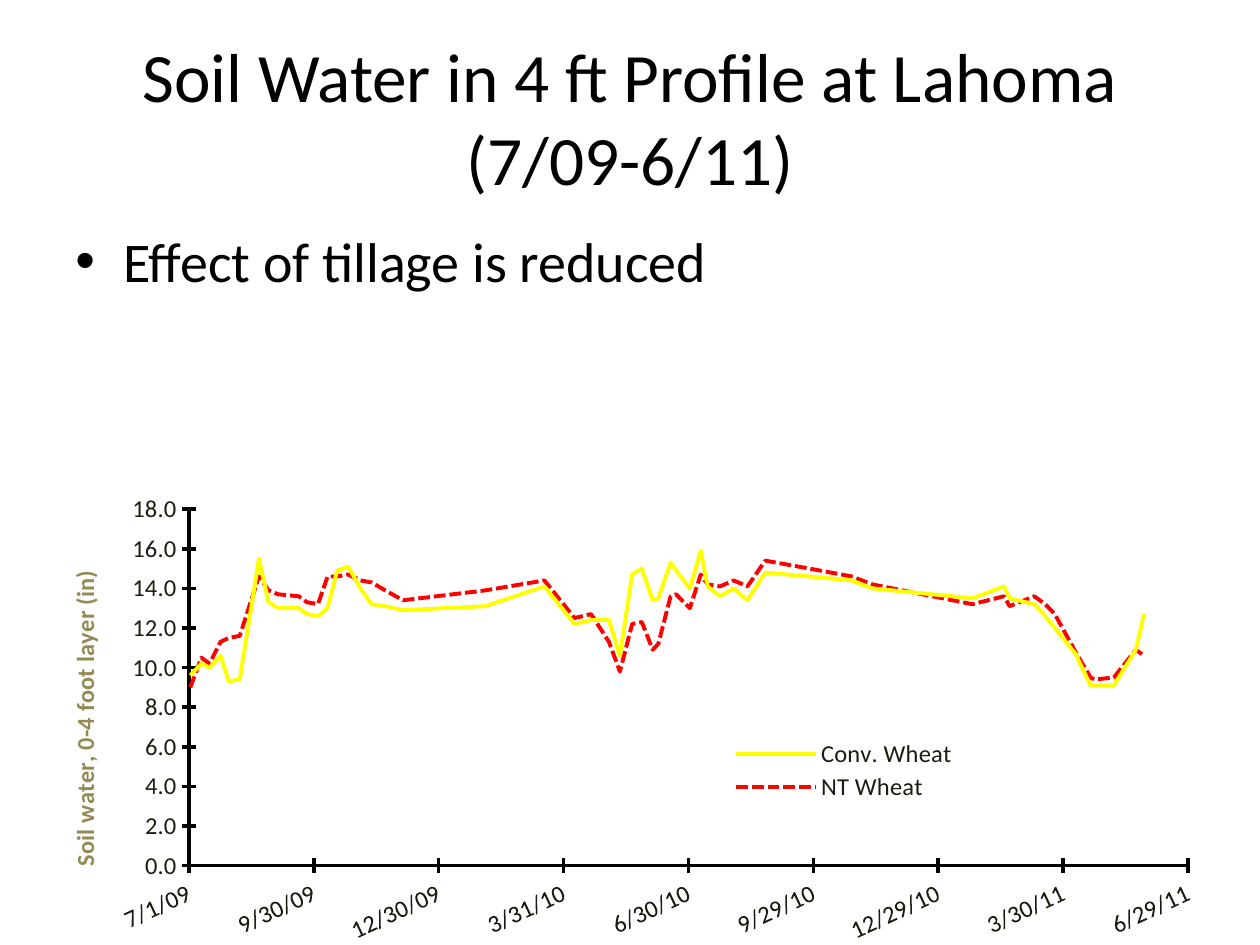
from dataclasses import dataclass

from lxml.etree import SubElement
from pptx import Presentation
from pptx.chart.data import XyChartData
from pptx.dml.color import RGBColor as Rgb
from pptx.enum.chart import XL_CHART_TYPE as ChartType, XL_LEGEND_POSITION as LegendSide, XL_TICK_MARK as Tick
from pptx.enum.dml import MSO_LINE_DASH_STYLE as Dash
from pptx.enum.text import MSO_ANCHOR as Anchor, MSO_AUTO_SIZE as AutoSize, PP_ALIGN as Align
from pptx.oxml.ns import qn
from pptx.util import Inches, Pt


@dataclass(frozen=True)
class Theme:
    font: str = "Calibri"
    ink: Rgb = Rgb(0, 0, 0)
    label: Rgb = Rgb(0x1E, 0x1C, 0x11)
    axis_title: Rgb = Rgb(0x94, 0x8A, 0x54)
    conventional: Rgb = Rgb(0xFF, 0xFF, 0)
    no_till: Rgb = Rgb(0xFF, 0, 0)
    title_size: float = 39.6
    body_size: float = 32
    chart_size: float = 14
    axis_width: float = 2
    series_width: float = 2.25


THEME = Theme()
WIDTH, HEIGHT = Inches(10), Inches(7.5)

TITLE_BOX = (0.05, 0.04, 0.9, 0.167)
BODY_BOX = (0.05, 0.233, 0.9, 0.66)
CHART_BOX = (0, 0.523, 1, 0.477)

SAMPLE_DAYS = [
    39996, 40004, 40010, 40018, 40024, 40032, 40038, 40046, 40053, 40060, 40075,
    40081, 40089, 40096, 40103, 40111, 40120, 40128, 40138, 40151, 40211, 40254,
    40276, 40288, 40301, 40309, 40318, 40325, 40333, 40337, 40346, 40350, 40360,
    40368, 40373, 40382, 40392, 40402, 40415, 40447, 40478, 40493, 40566, 40589,
    40593, 40611, 40619, 40626, 40641, 40652, 40655, 40669, 40685, 40691,
]
CONV_WATER = [
    9.6, 10.2, 10, 10.6, 9.3, 9.4, 12, 15.5, 13.3, 13, 13, 12.7, 12.6, 13, 14.9,
    15.1, 14, 13.2, 13.1, 12.9, 13.1, 14.1, 12.2, 12.4, 12.4, 10.6, 14.7, 15,
    13.4, 13.5, 15.3, 14.9, 14, 15.9, 14.1, 13.6, 14, 13.4, 14.8, 14.6, 14.4,
    14, 13.5, 14.1, 13.5, 13.2, 12.6, 12, 10.7, 9.1, 9.1, 9.1, 10.9, 12.7,
]
NO_TILL_WATER = [
    9, 10.5, 10.2, 11.3, 11.5, 11.6, 12.9, 14.6, 13.9, 13.7, 13.6, 13.3, 13.2,
    14.6, 14.6, 14.7, 14.4, 14.3, 13.9, 13.4, 13.9, 14.4, 12.5, 12.7, 11.3, 9.8,
    12.2, 12.3, 10.9, 11.2, 13.6, 13.7, 13, 14.7, 14.2, 14.1, 14.4, 14.1, 15.4,
    15, 14.6, 14.2, 13.2, 13.6, 13.1, 13.6, 13.2, 12.7, 10.8, 9.5, 9.4, 9.5,
    10.9, 10.6,
]
TREATMENTS = [
    ("Conv. Wheat", CONV_WATER, THEME.conventional, Dash.SOLID),
    ("NT Wheat", NO_TILL_WATER, THEME.no_till, Dash.SQUARE_DOT),
]


def place(box):
    left, top, width, height = box
    return (round(left * WIDTH), round(top * HEIGHT),
            round(width * WIDTH), round(height * HEIGHT))


def style(font, size, color, bold=False):
    font.name, font.size, font.bold = THEME.font, Pt(size), bold
    font.color.rgb = color


def add_run(paragraph, words, size, color, bold=False):
    run = paragraph.add_run()
    run.text = words
    style(run.font, size, color, bold)


def fix_layout(part, before, **shares):
    for old in part.findall(qn("c:layout")):
        part.remove(old)
    layout = SubElement(part, qn("c:layout"))
    part.insert(0 if before is None else part.index(part.find(qn(before))) + 1, layout)
    manual = SubElement(layout, qn("c:manualLayout"))
    for tag, value in shares.items():
        SubElement(manual, qn(f"c:{tag}")).set("val", str(value))


def fill_title(slide, box):
    title = slide.shapes.title
    title.left, title.top, title.width, title.height = place(box)
    frame = title.text_frame
    frame.auto_size, frame.word_wrap = AutoSize.NONE, True
    frame.vertical_anchor = Anchor.MIDDLE
    heading = frame.paragraphs[0]
    heading.alignment = Align.CENTER
    add_run(heading, "Soil Water in 4 ft Profile at Lahoma (7/09-6/11)",
            THEME.title_size, THEME.ink)


def add_finding(slide, box):
    frame = slide.shapes.add_textbox(*place(box)).text_frame
    frame.word_wrap = True
    finding = frame.paragraphs[0]
    props = finding._p.get_or_add_pPr()
    indent = Inches(0.38)
    props.set("marL", str(indent))
    props.set("indent", str(-indent))
    SubElement(props, qn("a:buFont")).set("typeface", "Arial")
    SubElement(props, qn("a:buChar")).set("char", "•")
    add_run(finding, "Effect of tillage is reduced", THEME.body_size, THEME.ink)


def format_axis(axis, low, high, step, number_format):
    axis.minimum_scale, axis.maximum_scale, axis.major_unit = low, high, step
    axis.has_major_gridlines = axis.has_minor_gridlines = False
    axis.major_tick_mark, axis.minor_tick_mark = Tick.CROSS, Tick.NONE
    axis.format.line.color.rgb = THEME.ink
    axis.format.line.width = Pt(THEME.axis_width)
    labels = axis.tick_labels
    labels.number_format, labels.number_format_is_linked = number_format, False
    style(labels.font, THEME.chart_size, THEME.label)


def add_water_chart(slide, box):
    readings = XyChartData(number_format="0.0")
    for name, water, _, _ in TREATMENTS:
        treatment = readings.add_series(name)
        for day, inches in zip(SAMPLE_DAYS, water):
            treatment.add_data_point(day, inches)
    chart = slide.shapes.add_chart(
        ChartType.XY_SCATTER_LINES_NO_MARKERS, *place(box), readings).chart
    style(chart.font, THEME.chart_size, THEME.ink)
    chart.has_title = False
    plot = chart.plots[0]
    plot.vary_by_categories = False
    for series, (_, _, color, dash) in zip(plot.series, TREATMENTS):
        series.smooth = False
        line = series.format.line
        line.color.rgb, line.width, line.dash_style = color, Pt(THEME.series_width), dash

    dates, depth = chart.category_axis, chart.value_axis
    format_axis(dates, 39995, 40724, 91, "m/d/yy;@")
    dates._element.find(qn("c:txPr")).find(qn("a:bodyPr")).set("rot", "-1500000")
    format_axis(depth, 0, 18, 2, "0.0")
    caption = depth.axis_title
    add_run(caption.text_frame.paragraphs[0], "Soil water, 0-4 foot layer (in)",
            THEME.chart_size, THEME.axis_title, bold=True)
    turned = caption.text_frame._txBody.find(qn("a:bodyPr"))
    turned.set("rot", "-5400000")
    turned.set("vert", "horz")

    chart.has_legend = True
    legend = chart.legend
    legend.position, legend.include_in_layout = LegendSide.RIGHT, False
    style(legend.font, THEME.chart_size, THEME.label)

    fix_layout(plot._element.getparent(), None, layoutTarget="inner", xMode="edge",
               yMode="edge", x=0.15, y=0.033, w=0.794, h=0.798)
    fix_layout(caption._element, "c:tx", xMode="edge", yMode="edge", x=0.05, y=0.166)
    fix_layout(legend._element, "c:legendPos", xMode="edge", yMode="edge",
               x=0.57, y=0.54, w=0.2, h=0.155)


def main():
    deck = Presentation()
    deck.slide_width, deck.slide_height = WIDTH, HEIGHT
    slide = deck.slides.add_slide(deck.slide_layouts[5])
    fill_title(slide, TITLE_BOX)
    add_finding(slide, BODY_BOX)
    add_water_chart(slide, CHART_BOX)
    deck.save("out.pptx")


if __name__ == "__main__":
    main()
